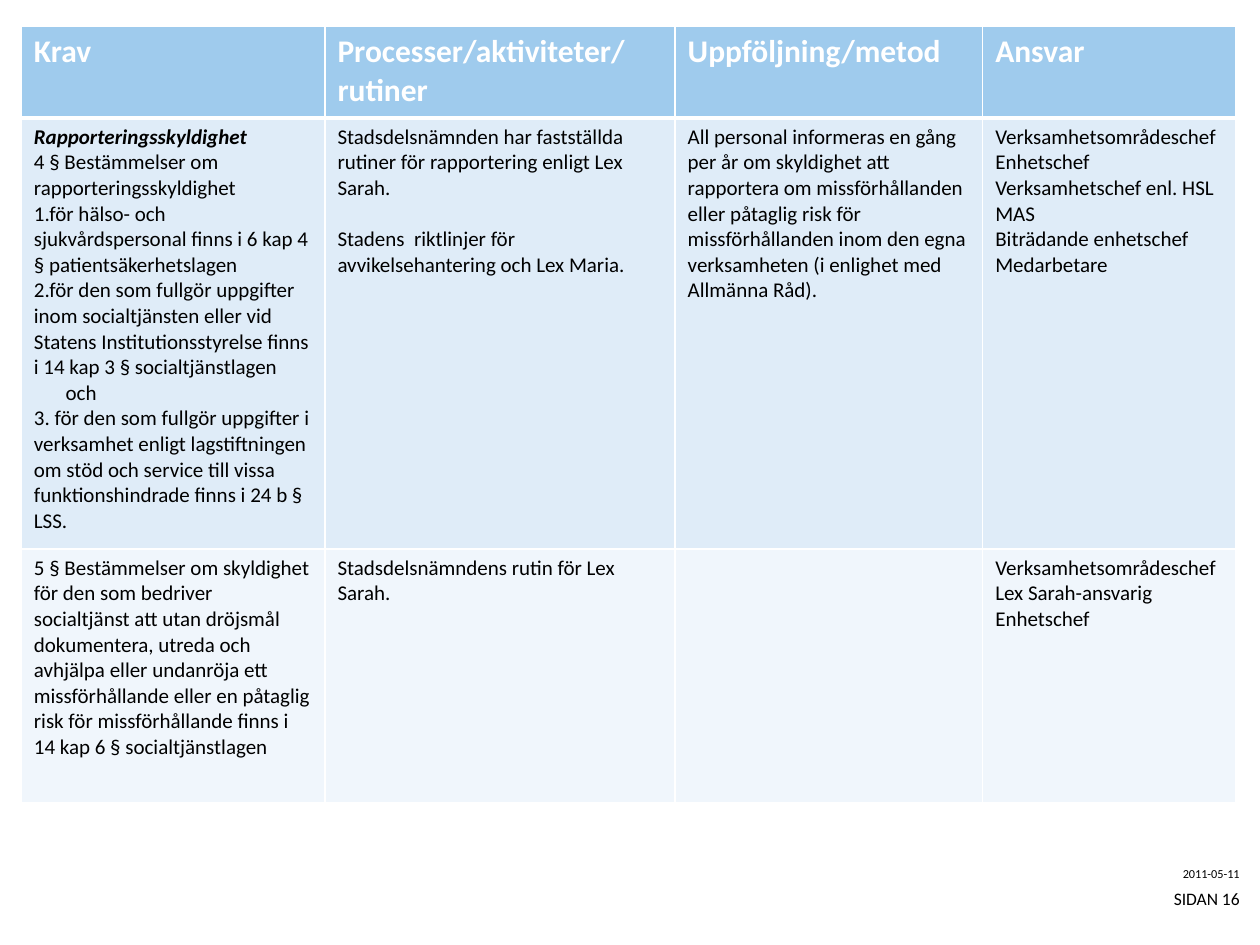
from lxml import etree
from pptx import Presentation
from pptx import util as u
from pptx.dml.color import RGBColor
from pptx.enum import text
from pptx.oxml.ns import qn

COLORS = {"white": "FFFFFF", "black": "000000", "header": "9FCBED",
          "band_dark": "DFECF8", "band_light": "F0F6FC"}


def add_run(paragraph, words, size, color="black", bold=False, italic=False):
    run = paragraph.add_run()
    run.text = words
    run.font.name = "Calibri"
    run.font.size = u.Pt(size)
    run.font.bold = bold
    run.font.italic = italic
    run.font.color.rgb = RGBColor.from_string(COLORS[color])


def add_border(cell, side, width):
    line = etree.SubElement(cell._tc.get_or_add_tcPr(), qn("a:" + side),
                            w=str(u.Pt(width)))
    fill = etree.SubElement(line, qn("a:solidFill"))
    etree.SubElement(fill, qn("a:srgbClr"), val=COLORS["white"])


prs = Presentation()
prs.slide_width, prs.slide_height = u.Cm(25.4), u.Cm(19.05)
slide = prs.slides.add_slide(prs.slide_layouts[6])

# Date and page number
for top, words, size in [(17.37, "2011-05-11", 7), (17.88, "SIDAN 16", 10)]:
    footer = slide.shapes.add_textbox(u.Cm(22.35), u.Cm(top), u.Cm(2.64), u.Cm(0.48)).text_frame
    footer.word_wrap = True
    footer.vertical_anchor = text.MSO_ANCHOR.MIDDLE
    footer.margin_left = footer.margin_right = footer.margin_top = footer.margin_bottom = 0
    footer.paragraphs[0].alignment = text.PP_ALIGN.RIGHT
    add_run(footer.paragraphs[0], words, size)

# Table content: one list of paragraphs per cell
headings = [["Krav"], ["Processer/aktiviteter/rutiner"], ["Uppföljning/metod"], ["Ansvar"]]
reporting = [
    ["Rapporteringsskyldighet",
     "4 § Bestämmelser om",
     "rapporteringsskyldighet",
     "1.för hälso- och",
     "sjukvårdspersonal finns i 6 kap 4",
     "§ patientsäkerhetslagen",
     "2.för den som fullgör uppgifter",
     "inom socialtjänsten eller vid",
     "Statens Institutionsstyrelse finns",
     "i 14 kap 3 § socialtjänstlagen och",
     "3. för den som fullgör uppgifter i",
     "verksamhet enligt lagstiftningen",
     "om stöd och service till vissa",
     "funktionshindrade finns i 24 b §",
     "LSS."],
    ["Stadsdelsnämnden har fastställda rutiner för rapportering enligt Lex Sarah.",
     "Stadens  riktlinjer för avvikelsehantering och Lex Maria."],
    ["All personal informeras en gång per år om skyldighet att rapportera om "
     "missförhållanden eller påtaglig risk för missförhållanden inom den egna "
     "verksamheten (i enlighet med Allmänna Råd)."],
    ["Verksamhetsområdeschef", "Enhetschef", "Verksamhetschef enl. HSL", "MAS",
     "Biträdande enhetschef", "Medarbetare"],
]
documentation = [
    ["5 § Bestämmelser om skyldighet för den som bedriver socialtjänst att utan "
     "dröjsmål dokumentera, utreda och avhjälpa eller undanröja ett missförhållande "
     "eller en påtaglig risk för missförhållande finns i 14 kap 6 § socialtjänstlagen"],
    ["Stadsdelsnämndens rutin för Lex Sarah."],
    [],
    ["Verksamhetsområdeschef", "Lex Sarah-ansvarig", "Enhetschef"],
]
rows = [(1.85, "header", headings), (8.69, "band_dark", reporting),
        (5.11, "band_light", documentation)]
column_widths = [6.12, 7.06, 6.2, 5.1]

# Requirements table
requirements = slide.shapes.add_table(
    len(rows), len(column_widths), u.Cm(0.43), u.Cm(0.53),
    u.Cm(sum(column_widths)), u.Cm(sum(row[0] for row in rows))).table
requirements.horz_banding = False
for column, width in zip(requirements.columns, column_widths):
    column.width = u.Cm(width)

for r, (height, fill, contents) in enumerate(rows):
    requirements.rows[r].height = u.Cm(height)
    is_header = r == 0
    for c, paragraphs in enumerate(contents):
        cell = requirements.cell(r, c)
        for side in ("lnL", "lnR", "lnT", "lnB"):
            heavy = (r, side) in [(0, "lnB"), (1, "lnT")]
            add_border(cell, side, 3 if heavy else 1)
        cell.fill.solid()
        cell.fill.fore_color.rgb = RGBColor.from_string(COLORS[fill])
        for i, words in enumerate(paragraphs):
            frame = cell.text_frame
            paragraph = frame.paragraphs[0] if i == 0 else frame.add_paragraph()
            if contents is reporting and c == 0:  # hanging indent
                properties = paragraph._p.get_or_add_pPr()
                properties.set("marL", str(u.Cm(0.64)))
                properties.set("indent", str(-u.Cm(0.64)))
            if contents is reporting and c == 1 and i > 0:  # one line of air
                paragraph.space_before = u.Pt(14.6)
            is_lead = contents is reporting and c == 0 and i == 0
            add_run(paragraph, words, 18 if is_header else 12,
                    "white" if is_header else "black",
                    bold=is_header or is_lead, italic=is_lead)

prs.save("out.pptx")
